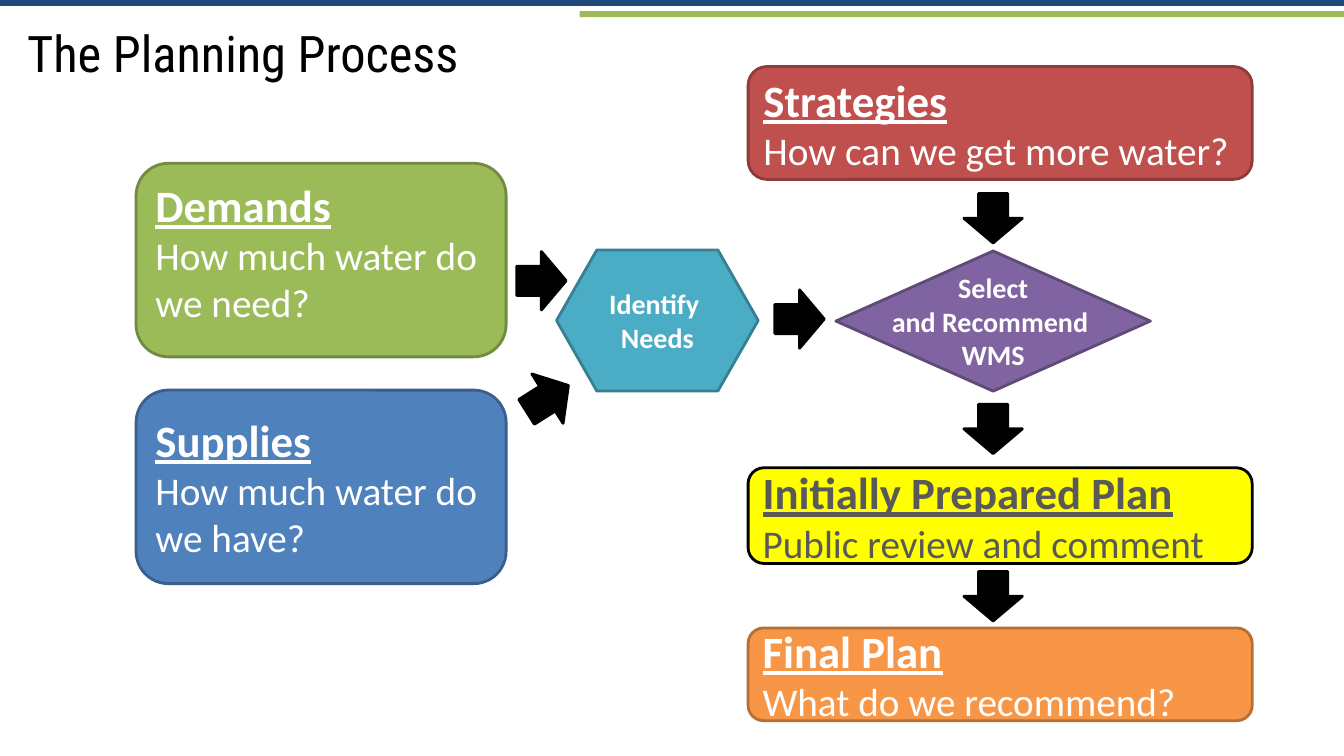
import pptx
import pptx.util
import pptx.dml.color
import pptx.enum.shapes
import pptx.enum.text

Inches = pptx.util.Inches
SHAPES = pptx.enum.shapes.MSO_SHAPE
ANCHOR = pptx.enum.text.MSO_ANCHOR
ALIGN = pptx.enum.text.PP_ALIGN

COLORS = {
    "navy": "1F497D", "white": "FFFFFF", "black": "000000", "gray": "595959",
    "green": "9BBB59", "green_edge": "738A42",
    "blue": "4F81BD", "blue_edge": "3A5F8C",
    "red": "C0504D", "red_edge": "8E3B39",
    "orange": "F79646", "orange_edge": "B76F34",
    "teal": "4BACC6", "teal_edge": "377F92",
    "purple": "8064A2", "purple_edge": "5F4A78",
    "yellow": "FFFF00",
}
ARROW_WIDTH, ARROW_HEIGHT = 0.58, 0.49


def rgb(name):
    """Return the named colour."""
    return pptx.dml.color.RGBColor.from_string(COLORS[name])


def add_text(paragraph, text, size=20, color="white", bold=False,
             underline=False, font="Calibri"):
    """Append a formatted run to a paragraph."""
    run = paragraph.add_run()
    run.text = text
    run.font.name = font
    run.font.size = pptx.util.Pt(size)
    run.font.bold = bold
    run.font.underline = underline
    run.font.color.rgb = rgb(color)


def add_block(slide, kind, box, fill, edge=None, rotation=0):
    """Draw a filled shape, outlined when an edge colour is given."""
    block = slide.shapes.add_shape(kind, *map(Inches, box))
    block.shadow.inherit = False
    block.rotation = rotation
    block.fill.solid()
    block.fill.fore_color.rgb = rgb(fill)
    if edge:
        block.line.color.rgb = rgb(edge)
        block.line.width = pptx.util.Pt(2)
    else:
        block.line.fill.background()
    return block


def add_stage(slide, box, heading, detail, fill, edge, color="white",
              anchor=ANCHOR.MIDDLE):
    """Draw a rounded stage with an underlined heading and its detail."""
    stage = add_block(slide, SHAPES.ROUNDED_RECTANGLE, box, fill, edge)
    frame = stage.text_frame
    frame.word_wrap = True
    frame.vertical_anchor = anchor
    paragraph = frame.paragraphs[0]
    paragraph.alignment = ALIGN.LEFT
    add_text(paragraph, heading, size=32, color=color, bold=True, underline=True)
    paragraph.add_line_break()
    add_text(paragraph, detail, size=28, color=color)


def add_step(slide, kind, box, lines, fill, edge):
    """Draw a flowchart step with centred bold lines."""
    frame = add_block(slide, kind, box, fill, edge).text_frame
    frame.word_wrap = False
    frame.vertical_anchor = ANCHOR.MIDDLE
    for index, line in enumerate(lines):
        paragraph = frame.add_paragraph() if index else frame.paragraphs[0]
        paragraph.alignment = ALIGN.CENTER
        add_text(paragraph, line, bold=True)


def add_arrow(slide, left, top, rotation=0):
    """Draw a black block arrow that points down before rotation."""
    add_block(slide, SHAPES.DOWN_ARROW, (left, top, ARROW_WIDTH, ARROW_HEIGHT),
              "black", "black", rotation)


def add_header(slide, box):
    """Place the two header bars and the title."""
    left, top, width, height = box
    bar = 0.06
    accent = 7.58
    add_block(slide, SHAPES.RECTANGLE, (left, top, width, bar), "navy")
    add_block(slide, SHAPES.RECTANGLE,
              (left + width - accent, top + 0.11, accent, bar), "green")
    title = slide.shapes.title
    title.left, title.top = Inches(left + 0.17), Inches(top + 0.17)
    title.width, title.height = Inches(12.92), Inches(height - 0.17)
    title.text_frame.vertical_anchor = ANCHOR.TOP
    paragraph = title.text_frame.paragraphs[0]
    paragraph.alignment = ALIGN.LEFT
    add_text(paragraph, "The Planning Process", size=36, color="black",
             font="Roboto Condensed")


def add_inputs(slide, box):
    """Stack demands and supplies with arrows leading right."""
    left, top, width, height = box
    stage = 1.92
    add_stage(slide, (left, top, width, stage), "Demands",
              "How much water do we need?", "green", "green_edge",
              anchor=ANCHOR.TOP)
    add_stage(slide, (left, top + height - stage, width, stage), "Supplies",
              "How much water do we have?", "blue", "blue_edge")
    add_arrow(slide, left + width + 0.06, top + 0.92, 270)
    add_arrow(slide, left + width + 0.12, top + 2.09, 237.7)


def add_needs(slide, box):
    """Place the needs hexagon and the arrow after it."""
    left, top, width, height = box
    add_step(slide, SHAPES.FLOWCHART_PREPARATION, box, ["Identify ", "Needs"],
             "teal", "teal_edge")
    add_arrow(slide, left + width + 0.12, top + 0.44, 270)


def add_plan(slide, box):
    """Run strategies, selection and both plans down a column."""
    left, top, width, height = box
    axis = left + 2.43
    add_stage(slide, (left, top, width, 1.12), "Strategies",
              "How can we get more water?", "red", "red_edge")
    add_step(slide, SHAPES.FLOWCHART_DECISION,
             (axis - 1.56, top + 1.83, 3.12, 1.39),
             ["Select", "and Recommend ", "WMS"], "purple", "purple_edge")
    add_stage(slide, (left, top + 3.98, width, 0.95), "Initially Prepared Plan",
              "Public review and comment", "yellow", "black", color="gray")
    add_stage(slide, (left, top + height - 0.92, width, 0.92), "Final Plan",
              "What do we recommend?", "orange", "orange_edge")
    for drop in (1.26, 3.35, 5.01):
        add_arrow(slide, axis - ARROW_WIDTH / 2, top + drop)


def main():
    """Build and save the planning process slide."""
    deck = pptx.Presentation()
    deck.slide_width, deck.slide_height = Inches(13.33), Inches(7.5)
    slide = deck.slides.add_slide(deck.slide_layouts[5])
    add_header(slide, (0, 0, 13.33, 1.09))
    add_inputs(slide, (1.35, 1.62, 3.67, 4.17))
    add_needs(slide, (5.52, 2.48, 2, 1.4))
    add_plan(slide, (7.42, 0.66, 5, 6.49))
    deck.save("out.pptx")


if __name__ == "__main__":
    main()
